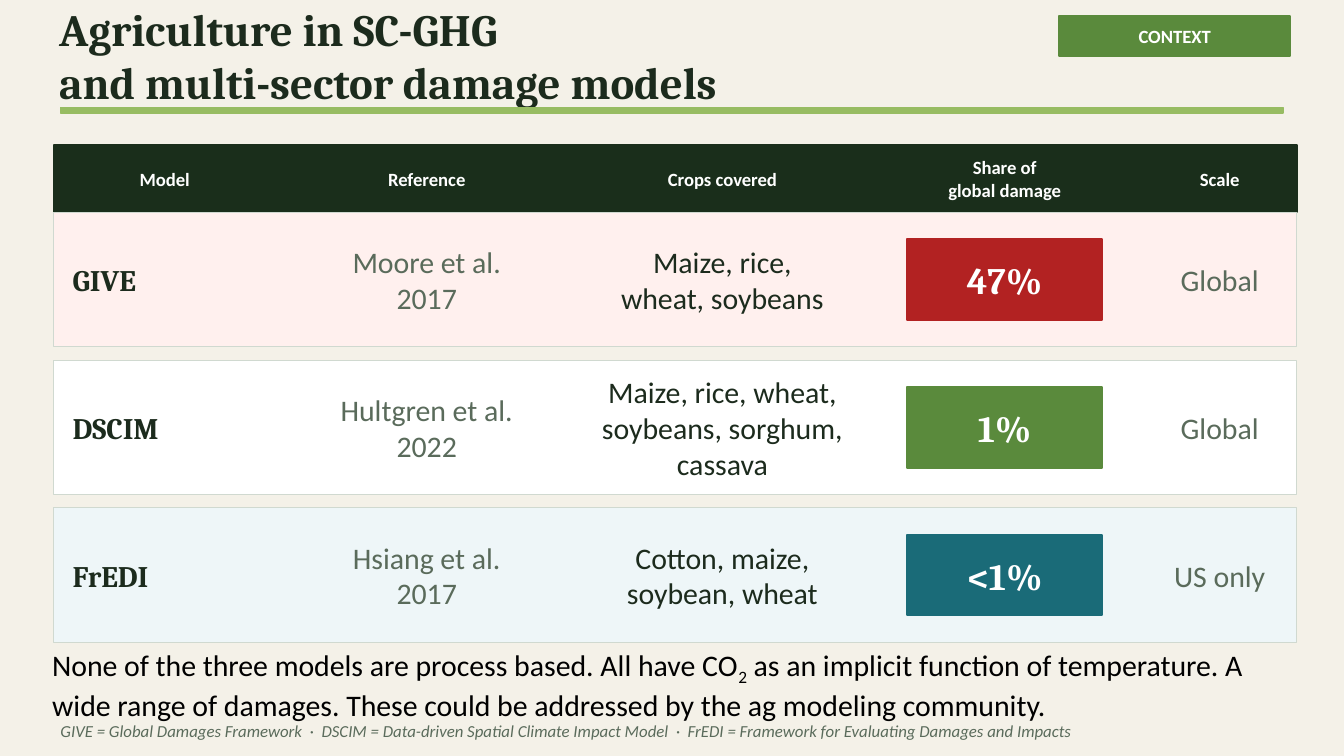
from pptx import Presentation
from pptx import util as u
from pptx.dml.color import RGBColor
from pptx.enum import shapes, text

Pt = u.Pt
rgb = RGBColor.from_string
LEFT, CENTER = text.PP_ALIGN.LEFT, text.PP_ALIGN.CENTER
INK, GREY, GREEN, WHITE = "1C2B1D", "5A6B5B", "5A8A3C", "FFFFFF"

deck = Presentation()
deck.slide_width, deck.slide_height = Pt(720), Pt(405)
page = deck.slides.add_slide(deck.slide_layouts[6])
page.background.fill.solid()
page.background.fill.fore_color.rgb = rgb("F4F1E8")


def add_bar(left, top, width, height, fill, line=None, weight=1):
    box = page.shapes.add_shape(shapes.MSO_SHAPE.RECTANGLE,
                                Pt(left), Pt(top), Pt(width), Pt(height))
    box.shadow.inherit = False
    box.fill.solid()
    box.fill.fore_color.rgb = rgb(fill)
    box.line.color.rgb = rgb(line or fill)
    box.line.width = Pt(weight)
    return box


def write(box, lines, size, color, font="Calibri", bold=False, italic=False,
          align=CENTER, inset=0.0):
    frame = box.text_frame
    frame.word_wrap = True
    frame.vertical_anchor = text.MSO_ANCHOR.MIDDLE
    frame.margin_left = frame.margin_right = Pt(inset)
    frame.margin_top = frame.margin_bottom = Pt(inset)
    for i, line in enumerate(lines):
        para = frame.paragraphs[0] if i == 0 else frame.add_paragraph()
        para.alignment = align
        span = para.add_run()
        span.text = line
        span.font.name, span.font.size = font, Pt(size)
        span.font.bold, span.font.italic = bold, italic
        span.font.color.rgb = rgb(color)


# Section tag
tag = add_bar(567.36, 8.64, 123.84, 21.6, GREEN)
write(tag, ["CONTEXT"], 10, WHITE, bold=True)

# Title and rule
title = page.shapes.add_textbox(Pt(31.7), Pt(7.2), Pt(655.2), Pt(44.64))
write(title, ["Agriculture in SC-GHG", "and multi-sector damage models"],
      24, INK, "Cambria", bold=True, align=LEFT)
add_bar(32.4, 57.6, 655.2, 2.88, "97BC62")

# Column headings: left, width, lines
row_left, row_width = 28.8, 666
header_top, header_height = 77.76, 36
columns = [
    (28.8, 118.8, ["Model"]),
    (151.2, 154.8, ["Reference"]),
    (309.6, 154.8, ["Crops covered"]),
    (468, 140.4, ["Share of", "global damage"]),
    (612, 82.8, ["Scale"]),
]
add_bar(row_left, header_top, row_width, header_height, "1A2E1B")
for left, width, lines in columns:
    heading = page.shapes.add_textbox(Pt(left), Pt(header_top),
                                      Pt(width), Pt(header_height))
    write(heading, lines, 10, WHITE, bold=True, inset=2.88)

# Model rows: name, reference, crops, share, scale, row fill, badge fill
models = [
    ("GIVE", ["Moore et al.", "2017"], ["Maize, rice,", "wheat, soybeans"],
     "47%", "Global", "FFF0EE", "B22222"),
    ("DSCIM", ["Hultgren et al.", "2022"],
     ["Maize, rice, wheat,", "soybeans, sorghum, cassava"],
     "1%", "Global", WHITE, GREEN),
    ("FrEDI", ["Hsiang et al.", "2017"], ["Cotton, maize,", "soybean, wheat"],
     "<1%", "US only", "EEF6F8", "1A6B78"),
]
row_height, row_gap = 72, 7.2
badge_width, badge_height = 104.4, 43.2
for i, (name, reference, crops, share, scale, fill, accent) in enumerate(models):
    top = header_top + header_height + i * (row_height + row_gap)
    add_bar(row_left, top, row_width, row_height, fill, "D0D9D0", 0.5)

    label = page.shapes.add_textbox(Pt(34.56), Pt(top), Pt(111.6), Pt(row_height))
    write(label, [name], 16, INK, "Cambria", bold=True, align=LEFT, inset=4.32)

    for column, lines, color in ((1, reference, GREY), (2, crops, INK),
                                 (4, [scale], GREY)):
        left, width, _ = columns[column]
        cell = page.shapes.add_textbox(Pt(left), Pt(top), Pt(width), Pt(row_height))
        write(cell, lines, 16, color, inset=4.32)

    left, width, _ = columns[3]
    badge = add_bar(left + (width - badge_width) / 2,
                    top + (row_height - badge_height) / 2,
                    badge_width, badge_height, accent)
    write(badge, [share], 20, WHITE, "Cambria", bold=True)

# Abbreviations
legend = page.shapes.add_textbox(Pt(32.4), Pt(380.16), Pt(655.2), Pt(23.04))
write(legend, ["GIVE = Global Damages Framework  ·  "
               "DSCIM = Data-driven Spatial Climate Impact Model  ·  "
               "FrEDI = Framework for Evaluating Damages and Impacts"],
      9, GREY, italic=True, align=LEFT)

# Takeaway, with a subscript in the formula
takeaway = page.shapes.add_textbox(Pt(20.88), Pt(342.72), Pt(678.96), Pt(46.08))
takeaway.text_frame.word_wrap = True
takeaway.text_frame.auto_size = text.MSO_AUTO_SIZE.SHAPE_TO_FIT_TEXT
para = takeaway.text_frame.paragraphs[0]
for words, baseline in (
    ("None of the three models are process based. All have CO", 0),
    ("2", -25000),
    (" as an implicit function of temperature. A wide range of damages. "
     "These could be addressed by the ag modeling community.", 0),
):
    span = para.add_run()
    span.text = words
    span.font.name, span.font.size = "Calibri", Pt(16)
    span.font.color.rgb = rgb("000000")
    if baseline:
        span.font._element.set("baseline", str(baseline))

deck.save("out.pptx")
